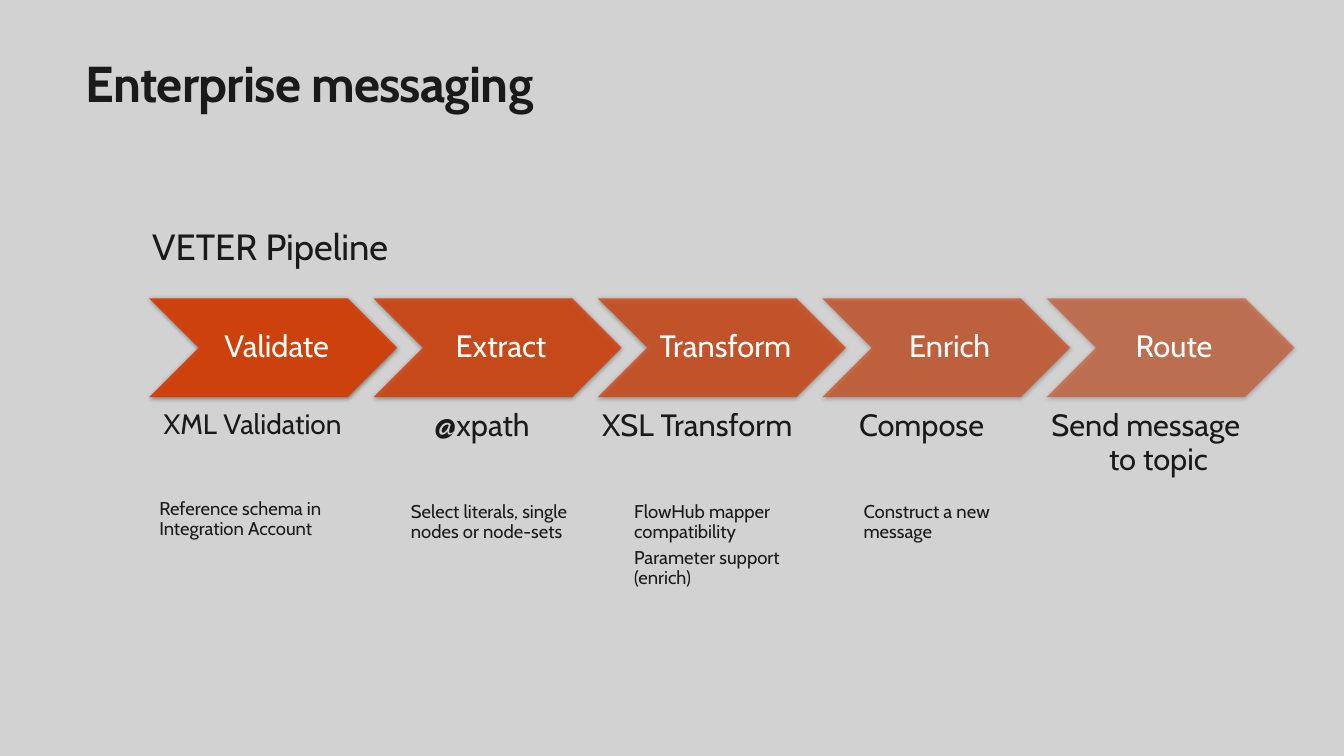
from dataclasses import dataclass

from lxml import etree
from pptx import Presentation
from pptx.dml.color import RGBColor
from pptx.enum.shapes import MSO_SHAPE
from pptx.enum.text import MSO_ANCHOR, PP_ALIGN
from pptx.oxml.ns import qn
from pptx.util import Inches, Pt

CHEVRON = MSO_SHAPE.CHEVRON
TOP, MIDDLE = MSO_ANCHOR.TOP, MSO_ANCHOR.MIDDLE
LEFT, CENTER = PP_ALIGN.LEFT, PP_ALIGN.CENTER

FONT = "Cabin"
COLORS = {
    "background": "D2D2D2",
    "ink": "1A1A1A",
    "stage": "D73B01",
    "label": "FFFFFF",
    "shadow": "000000",
}
STAGE_STEP = 2.225
STAGE_WIDTH, STAGE_HEIGHT = 2.46, 0.98


@dataclass
class Stage:
    name: str
    caption: str
    notes: tuple = ()
    caption_size: float = 22
    caption_shift: float = 0
    note_shift: float = 0
    note_top: float = 1.91


STAGES = [
    Stage("Validate", "XML Validation", ("Reference schema in Integration Account",),
          caption_size=20, caption_shift=0.04, note_shift=-0.05, note_top=1.88),
    Stage("Extract", "@xpath", ("Select literals, single nodes or node-sets",),
          caption_shift=0.09, note_shift=0.22),
    Stage("Transform", "XSL Transform",
          ("FlowHub mapper compatibility", "Parameter support (enrich)"),
          note_shift=0.21),
    Stage("Enrich", "Compose", ("Construct a new message",), note_shift=0.26),
    Stage("Route", "Send message to topic"),
]


def color(name):
    return RGBColor.from_string(COLORS[name])


def add_text(page, area, lines, size, ink="ink", insets=(0, 0, 0, 0), anchor=TOP,
             align=LEFT, line_spacing=1.0, space_after=0, hanging=0, bold=False,
             tracking=None):
    box = page.shapes.add_textbox(*(Inches(length) for length in area))
    frame = box.text_frame
    frame.word_wrap = True
    frame.vertical_anchor = anchor
    (frame.margin_left, frame.margin_top,
     frame.margin_right, frame.margin_bottom) = (Inches(inset) for inset in insets)
    for index, line in enumerate(lines):
        para = frame.paragraphs[0] if index == 0 else frame.add_paragraph()
        para.alignment = align
        para.line_spacing = line_spacing
        para.space_after = Pt(space_after)
        if hanging:
            properties = para._p.get_or_add_pPr()
            properties.set("marL", str(Inches(hanging)))
            properties.set("indent", str(-Inches(hanging)))
        span = para.add_run()
        span.text = line
        span.font.name = FONT
        span.font.size = Pt(size)
        span.font.bold = bold
        span.font.color.rgb = color(ink)
        if tracking is not None:
            span._r.get_or_add_rPr().set("spc", str(round(tracking * 100)))


def add_alpha(parent, percent):
    etree.SubElement(parent, qn("a:alpha"), val=str(percent * 1000))


def add_chevron(page, area, opacity):
    chevron = page.shapes.add_shape(CHEVRON, *(Inches(length) for length in area))
    chevron.fill.solid()
    chevron.fill.fore_color.rgb = color("stage")
    chevron.line.fill.background()
    chevron.shadow.inherit = False
    properties = chevron._element.spPr
    add_alpha(properties.find(qn("a:solidFill")).find(qn("a:srgbClr")), opacity)
    # Soft shadow straight below
    shadow = etree.SubElement(
        properties.find(qn("a:effectLst")), qn("a:outerShdw"),
        blurRad=str(Pt(3.5)), dist=str(Pt(1.1)), dir="5400000", rotWithShape="0")
    shade = etree.SubElement(shadow, qn("a:srgbClr"), val=COLORS["shadow"])
    add_alpha(shade, 45)


def add_stage(page, left, top, stage, opacity):
    # Arrow and its label
    add_chevron(page, (left, top, STAGE_WIDTH, STAGE_HEIGHT), opacity)
    add_text(page, (left + 0.49, top, 1.48, STAGE_HEIGHT), [stage.name], 22,
             ink="label", insets=(0.1, 0.03, 0.03, 0.03), anchor=MIDDLE,
             align=CENTER, line_spacing=0.9)
    # Caption under the arrow
    add_text(page, (left + stage.caption_shift, top + 1.11, 1.97, 0.74),
             [stage.caption], stage.caption_size, align=CENTER,
             line_spacing=0.9, hanging=0.25)
    # Small notes
    if stage.notes:
        height = 0.18 + 0.46 * len(stage.notes)
        add_text(page, (left + stage.note_shift, top + stage.note_top, 2.14, height),
                 stage.notes, 13.2, insets=(0.15, 0.12, 0.15, 0.12),
                 line_spacing=0.9, space_after=4.4)


def add_pipeline(page, left, top):
    for index, stage in enumerate(STAGES):
        add_stage(page, left + index * STAGE_STEP, top, stage, 90 - 10 * index)


def add_headings(page, left, top):
    add_text(page, (left, top, 11.63, 0.61), ["Enterprise messaging"], 36,
             bold=True, tracking=-0.5)
    add_text(page, (left + 0.66, top + 1.7, 11.63, 0.44), ["VETER Pipeline"], 26)


def main():
    deck = Presentation()
    deck.slide_width, deck.slide_height = Inches(13.33), Inches(7.5)
    page = deck.slides.add_slide(deck.slide_layouts[6])
    page.background.fill.solid()
    page.background.fill.fore_color.rgb = color("background")
    add_headings(page, 0.85, 0.52)
    add_pipeline(page, 1.48, 2.96)
    deck.save("out.pptx")


if __name__ == "__main__":
    main()
